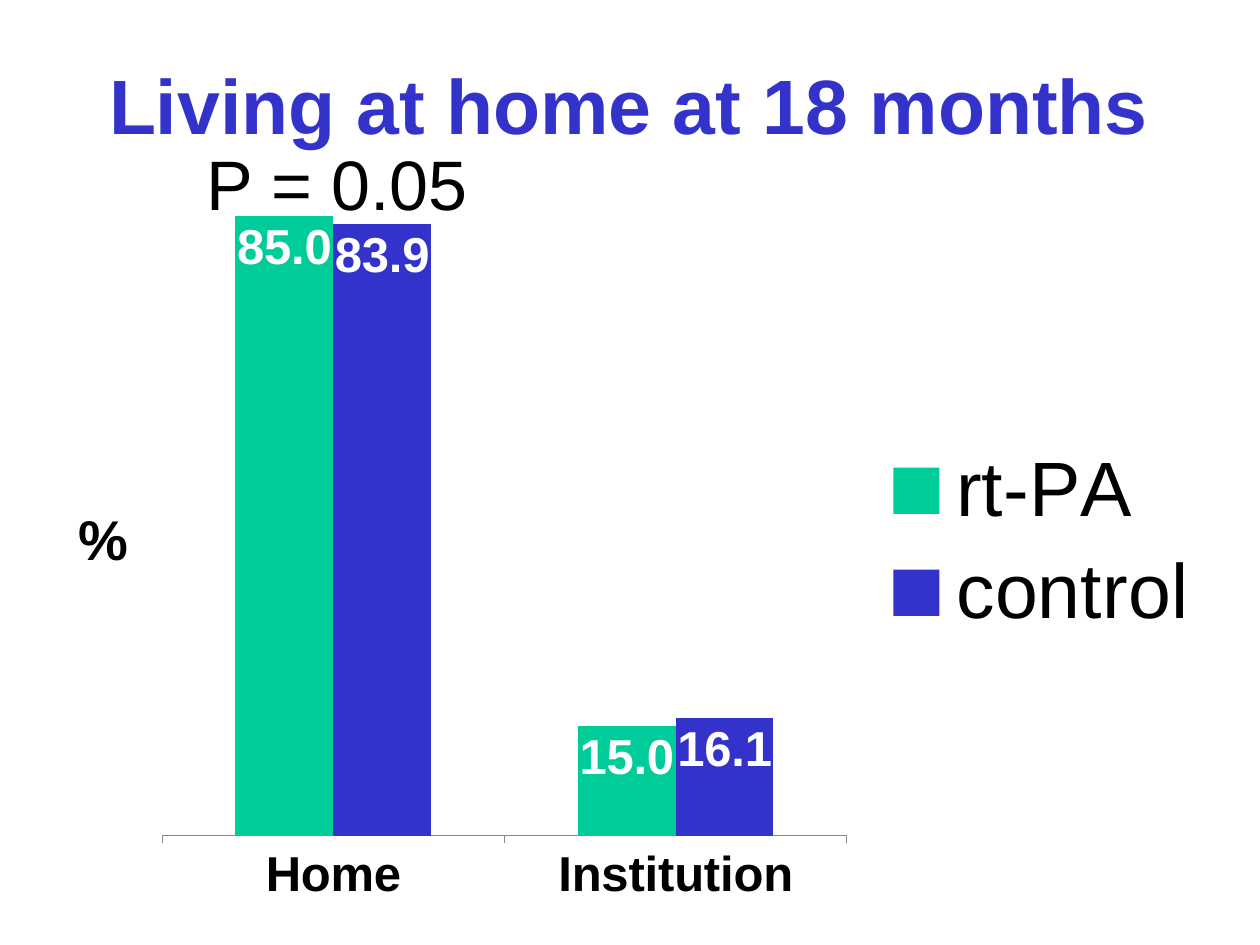
from lxml import etree
from pptx import Presentation
from pptx.chart.data import CategoryChartData
from pptx.dml.color import RGBColor
from pptx.enum import chart as c, text as t
from pptx.oxml.ns import qn
from pptx.util import Inches, Pt

COLORS = {
    "rt-PA": "00CC99",
    "control": "3333CC",
    "title": "3333CC",
    "text": "000000",
    "label": "FFFFFF",
    "axis": "888888",
}
CATEGORIES = ["Home", "Institution"]
SERIES = {"rt-PA": (85.0, 15.0), "control": (83.9, 16.1)}


def set_font(font, size, color, bold=False):
    font.name = "Arial"
    font.size = Pt(size)
    font.bold = bold
    font.color.rgb = RGBColor.from_string(COLORS[color])


def add_title(slide, wording):
    title = slide.shapes.title
    title.left, title.top = Inches(0.33), Inches(0.25)
    title.width, title.height = Inches(9.33), Inches(1.14)
    frame = title.text_frame
    frame.text = wording
    frame.vertical_anchor = t.MSO_ANCHOR.MIDDLE
    paragraph = frame.paragraphs[0]
    paragraph.alignment = t.PP_ALIGN.CENTER
    set_font(paragraph.runs[0].font, 44, "title", True)


def set_plot_layout(chart, **fractions):
    """Fix the inner plot area as fractions of the chart's size."""
    plot_area = chart._chartSpace.find(".//" + qn("c:plotArea"))
    for old_layout in plot_area.findall(qn("c:layout")):
        plot_area.remove(old_layout)
    layout = etree.Element(qn("c:layout"))
    plot_area.insert(0, layout)
    manual = etree.SubElement(layout, qn("c:manualLayout"))
    settings = {"layoutTarget": "inner", "xMode": "edge", "yMode": "edge", **fractions}
    for name, value in settings.items():
        etree.SubElement(manual, qn("c:" + name)).set("val", str(value))


def format_axes(chart):
    category_axis = chart.category_axis
    category_axis.major_tick_mark = c.XL_TICK_MARK.OUTSIDE
    category_axis.format.line.color.rgb = RGBColor.from_string(COLORS["axis"])
    set_font(category_axis.tick_labels.font, 28, "text", True)

    value_axis = chart.value_axis
    value_axis.minimum_scale, value_axis.maximum_scale = 0, 90
    value_axis.has_major_gridlines = False
    value_axis.tick_labels.number_format = "0.0"
    value_axis.tick_labels.number_format_is_linked = False
    value_axis.visible = False
    frame = value_axis.axis_title.text_frame
    frame.text = "%"
    set_font(frame.paragraphs[0].runs[0].font, 32, "text", True)
    body = value_axis.axis_title._element.find(".//" + qn("a:bodyPr"))
    body.set("rot", "0")
    body.set("vert", "horz")


def format_series(series):
    series.format.fill.solid()
    series.format.fill.fore_color.rgb = RGBColor.from_string(COLORS[series.name])
    labels = series.data_labels
    labels.show_value = True
    labels.number_format = "0.0"
    labels.number_format_is_linked = False
    labels.position = c.XL_LABEL_POSITION.INSIDE_END
    set_font(labels.font, 28, "label", True)


def add_column_chart(slide):
    data = CategoryChartData(number_format="0.0")
    data.categories = CATEGORIES
    for name, values in SERIES.items():
        data.add_series(name, values)
    chart = slide.shapes.add_chart(
        c.XL_CHART_TYPE.COLUMN_CLUSTERED,
        Inches(0.35), Inches(1.31), Inches(9.37), Inches(5.98), data,
    ).chart
    set_font(chart.font, 18, "text")
    chart.has_title = False
    chart.has_legend = True
    chart.legend.position = c.XL_LEGEND_POSITION.RIGHT
    chart.legend.include_in_layout = False
    set_font(chart.legend.font, 44, "text")
    plot = chart.plots[0]
    plot.gap_width, plot.overlap = 150, 0
    plot.vary_by_categories = False
    format_axes(chart)
    for series in plot.series:
        format_series(series)
    set_plot_layout(chart, x=0.1, y=0.02, w=0.58, h=0.87)


def add_p_value(slide, wording):
    box = slide.shapes.add_textbox(Inches(1.54), Inches(1.07), Inches(2.3), Inches(0.77))
    frame = box.text_frame
    frame.text = wording
    frame.word_wrap = False
    frame.auto_size = t.MSO_AUTO_SIZE.SHAPE_TO_FIT_TEXT
    set_font(frame.paragraphs[0].runs[0].font, 40, "text")


def main():
    presentation = Presentation()
    presentation.slide_width, presentation.slide_height = Inches(10), Inches(7.5)
    slide = presentation.slides.add_slide(presentation.slide_layouts[5])
    add_title(slide, "Living at home at 18 months")
    add_column_chart(slide)
    add_p_value(slide, "P = 0.05")
    presentation.save("out.pptx")


if __name__ == "__main__":
    main()
